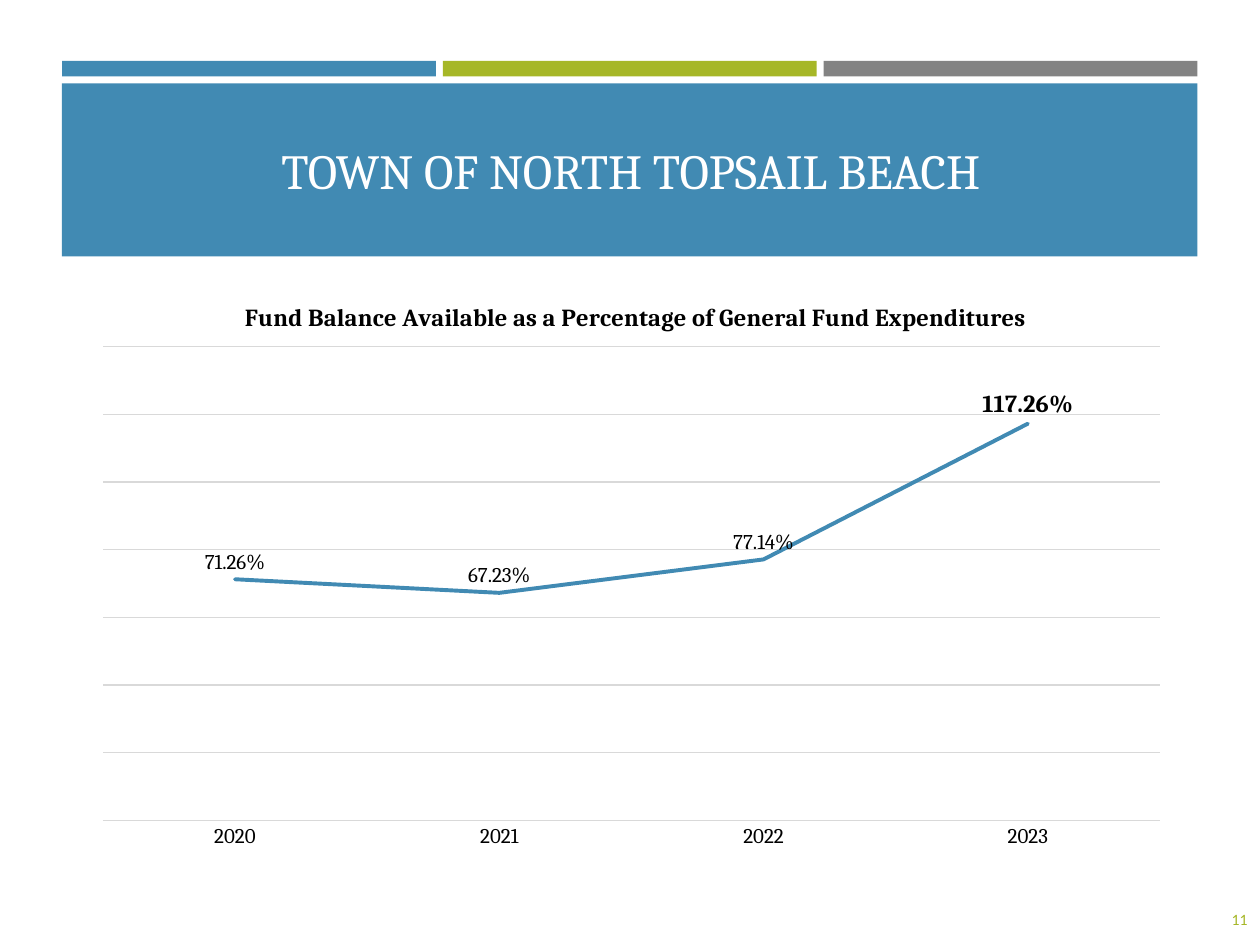
from lxml.etree import SubElement
from pptx import Presentation
from pptx.chart.data import CategoryChartData
from pptx.dml.color import RGBColor
from pptx.enum.chart import XL_CHART_TYPE, XL_LABEL_POSITION, XL_TICK_MARK
from pptx.enum.shapes import MSO_SHAPE
from pptx.enum.text import MSO_ANCHOR, PP_ALIGN
from pptx.oxml import parse_xml
from pptx.oxml.ns import nsdecls, qn
from pptx.util import Cm, Pt

BLUE = RGBColor(0x41, 0x8A, 0xB3)
GREEN = RGBColor(0xA6, 0xB7, 0x27)
GREY = RGBColor(0x83, 0x83, 0x83)
PALE = RGBColor(0xD9, 0xD9, 0xD9)
BLACK = RGBColor(0, 0, 0)
WHITE = RGBColor(255, 255, 255)


def style(font, size, color, name="Cambria", bold=False):
    font.name, font.size, font.bold = name, Pt(size), bold
    font.color.rgb = color


def add_bar(slide, x, y, w, h, color):
    bar = slide.shapes.add_shape(MSO_SHAPE.RECTANGLE, Cm(x), Cm(y), Cm(w), Cm(h))
    bar.shadow.inherit = False
    bar.fill.solid()
    bar.fill.fore_color.rgb = color
    bar.line.fill.background()


def add_text(slide, x, y, w, h, text, align, anchor, size, color, name):
    frame = slide.shapes.add_textbox(Cm(x), Cm(y), Cm(w), Cm(h)).text_frame
    frame.word_wrap = True
    frame.vertical_anchor = anchor
    para = frame.paragraphs[0]
    para.alignment = align
    run = para.add_run()
    run.text = text
    style(run.font, size, color, name)


def add_header(slide, x, y, w, h):
    # Three strips above the title band
    gap, strip = 0.14, 0.31
    wide = (w - 2 * gap) / 3
    for i, color in enumerate((BLUE, GREEN, GREY)):
        add_bar(slide, x + i * (wide + gap), y, wide, strip, color)
    top = strip + 0.14
    add_bar(slide, x, y + top, w, h - top, BLUE)
    # Title
    add_text(slide, x - 0.6, y - 0.89, w + 1.24, 3.81,
             "TOWN OF NORTH TOPSAIL BEACH", PP_ALIGN.CENTER,
             MSO_ANCHOR.BOTTOM, 28, WHITE, "Cambria")


def layout(x, y, w=None, h=None):
    """Manual chart layout, in fractions of the chart's box."""
    inner = "" if w is None else '<c:layoutTarget val="inner"/>'
    parts = [("xMode", "edge"), ("yMode", "edge"), ("x", x), ("y", y)]
    if w is not None:
        parts += [("w", w), ("h", h)]
    body = "".join(f'<c:{tag} val="{val}"/>' for tag, val in parts)
    return parse_xml(f'<c:layout {nsdecls("c")}><c:manualLayout>{inner}{body}'
                     '</c:manualLayout></c:layout>')


def set_layout(node, new, spot):
    for old in node.findall(qn("c:layout")):
        node.remove(old)
    node.insert(spot, new)


def add_graph(slide, x, y, w, h):
    data = CategoryChartData(number_format="0.00%")
    data.categories = ["2020", "2021", "2022", "2023"]
    data.add_series("Series 1", (0.7126, 0.6723, 0.7714, 1.1726))
    chart = slide.shapes.add_chart(
        XL_CHART_TYPE.LINE, Cm(x), Cm(y), Cm(w), Cm(h), data).chart
    style(chart.font, 12, BLACK)
    chart.has_legend = False

    # Heading
    chart.has_title = True
    run = chart.chart_title.text_frame.paragraphs[0].add_run()
    run.text = "Fund Balance Available as a Percentage of General Fund Expenditures"
    style(run.font, 14, BLACK, bold=True)
    chart.chart_title.include_in_layout = False
    title = chart.chart_title._element
    set_layout(title, layout(0.145, 0.04), 1)
    area = chart._chartSpace.chart.plotArea
    set_layout(area, layout(0.02, 0.125, 0.96, 0.805), 0)

    # Axes
    cat, val = chart.category_axis, chart.value_axis
    cat.major_tick_mark = XL_TICK_MARK.NONE
    style(cat.tick_labels.font, 12, BLACK)
    val.minimum_scale, val.maximum_scale, val.major_unit = 0, 1.4, 0.2
    val.has_major_gridlines = True
    for line in (cat.format.line, val.major_gridlines.format.line):
        line.color.rgb = PALE
        line.width = Pt(0.75)
    val.visible = False

    # Line and its labels
    plot = chart.plots[0]
    plot.vary_by_categories = False
    series = plot.series[0]
    series.smooth = False
    series.format.line.color.rgb = BLUE
    series.format.line.width = Pt(2.25)
    cap = series.format.line._get_or_add_ln()
    cap.set("cap", "rnd")
    SubElement(cap, qn("a:round"))
    labels = series.data_labels
    labels.show_value = True
    labels.number_format = "0.00%"
    labels.number_format_is_linked = False
    labels.position = XL_LABEL_POSITION.ABOVE
    style(labels.font, 12, BLACK)
    last = series.points[3].data_label
    style(last.font, 14, BLACK, bold=True)
    last.position = XL_LABEL_POSITION.ABOVE


def add_number(slide, x, y, w, h):
    add_text(slide, x, y, w, h, "11", PP_ALIGN.RIGHT,
             MSO_ANCHOR.MIDDLE, 9, GREEN, "Calibri")


def main():
    deck = Presentation()
    deck.slide_width, deck.slide_height = Cm(25.4), Cm(19.05)
    slide = deck.slides.add_slide(deck.slide_layouts[6])
    add_header(slide, 1.25, 1.23, 22.89, 3.94)
    add_number(slide, 23.27, 18.03, 2.13, 1.02)
    add_graph(slide, 1.63, 5.51, 22.2, 11.86)
    deck.save("out.pptx")


if __name__ == "__main__":
    main()
